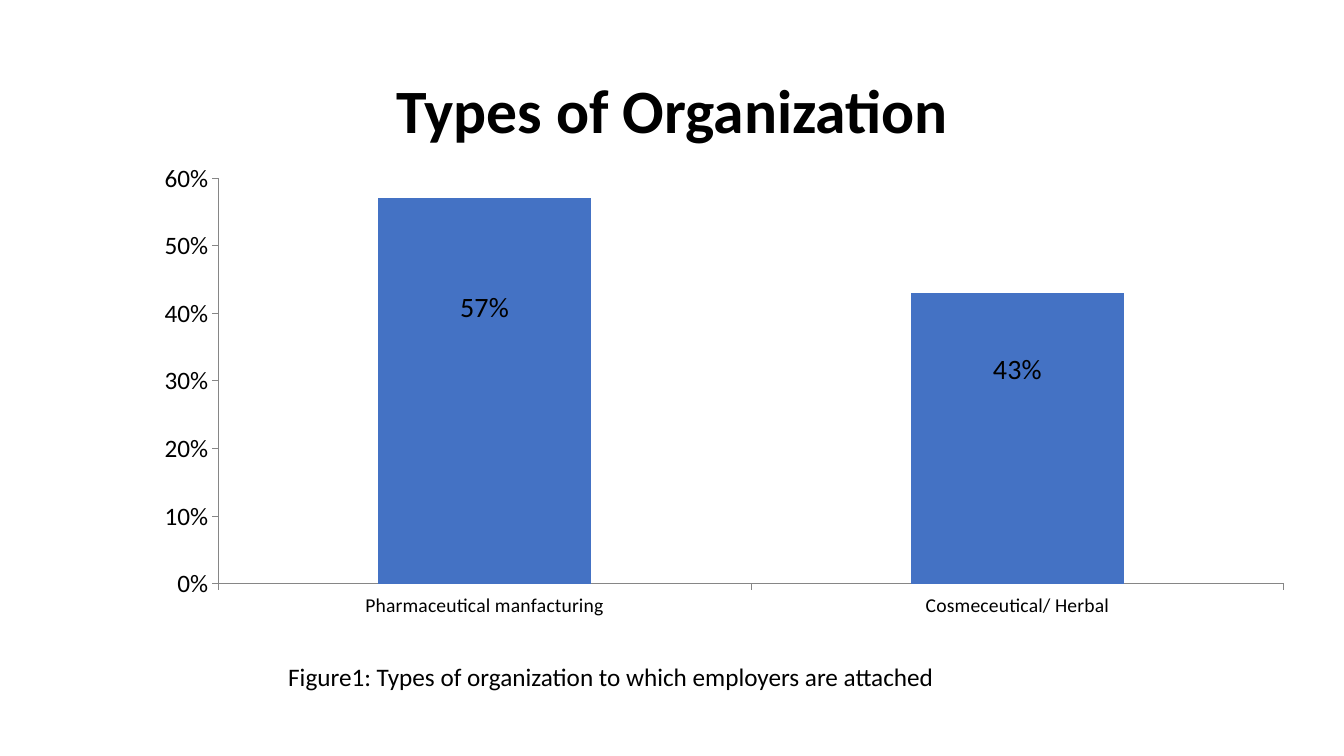
import dataclasses

import pptx
import pptx.chart.data
import pptx.dml.color
import pptx.enum.chart
import pptx.enum.text
import pptx.oxml
import pptx.oxml.ns
import pptx.util

Inches = pptx.util.Inches
Pt = pptx.util.Pt
qualified = pptx.oxml.ns.qn


@dataclasses.dataclass(frozen=True)
class Theme:
    font: str = "Calibri"
    text: str = "000000"
    bar: str = "4472C4"
    axis: str = "868686"
    title_size: int = 44
    label_size: int = 20
    body_size: int = 18
    category_size: int = 14
    chart_size: int = 10


THEME = Theme()

# Category, share, and the label's offset as fractions of the chart size
ORGANIZATIONS = [
    ("Pharmaceutical manfacturing", 0.57, (0, 0.28)),
    ("Cosmeceutical/ Herbal", 0.43, (0, 0.21)),
]


def color(value):
    return pptx.dml.color.RGBColor.from_string(value)


def set_values(target, values):
    for name, value in values.items():
        setattr(target, name, value)


def format_font(font, size, bold=False):
    set_values(font, {"name": THEME.font, "size": Pt(size), "bold": bold})
    font.color.rgb = color(THEME.text)


def set_layout(parent, index, values):
    """Give a chart element a manual layout, placed at the child index."""
    for old_layout in parent.findall(qualified("c:layout")):
        parent.remove(old_layout)
    settings = "".join(f'<c:{name} val="{value}"/>' for name, value in values.items())
    parent.insert(index, pptx.oxml.parse_xml(
        f'<c:layout {pptx.oxml.ns.nsdecls("c")}>'
        f"<c:manualLayout>{settings}</c:manualLayout></c:layout>"
    ))


def hide_leader_lines(labels):
    for setting in labels.findall(qualified("c:showLeaderLines")):
        setting.set("val", "0")
    labels.append(pptx.oxml.parse_xml(
        f'<c:extLst {pptx.oxml.ns.nsdecls("c")}>'
        '<c:ext uri="{CE6537A1-D6FC-4f65-9D91-7224C49458BB}" '
        'xmlns:c15="http://schemas.microsoft.com/office/drawing/2012/chart">'
        '<c15:showLeaderLines val="0"/></c:ext></c:extLst>'
    ))


def add_title(slide, text):
    title = slide.shapes.title
    set_values(title, {
        "left": Inches(0.92), "top": Inches(0.4),
        "width": Inches(11.5), "height": Inches(1.45),
    })
    frame = title.text_frame
    set_values(frame, {
        "text": text, "word_wrap": True,
        "vertical_anchor": pptx.enum.text.MSO_ANCHOR.MIDDLE,
    })
    paragraph = frame.paragraphs[0]
    set_values(paragraph, {
        "alignment": pptx.enum.text.PP_ALIGN.CENTER, "line_spacing": 0.9,
    })
    format_font(paragraph.runs[0].font, THEME.title_size, bold=True)


def format_axis(axis, size):
    set_values(axis, {
        "has_major_gridlines": False,
        "major_tick_mark": pptx.enum.chart.XL_TICK_MARK.OUTSIDE,
        "minor_tick_mark": pptx.enum.chart.XL_TICK_MARK.NONE,
    })
    axis.format.line.color.rgb = color(THEME.axis)
    axis.format.line.width = Pt(0.75)
    format_font(axis.tick_labels.font, size)


def format_labels(series):
    set_values(series.data_labels, {
        "show_value": True, "number_format": "0%", "number_format_is_linked": False,
    })
    format_font(series.data_labels.font, THEME.label_size)
    for index in range(len(ORGANIZATIONS)):
        label = series.points[index].data_label
        format_font(label.font, THEME.label_size)
        label.position = pptx.enum.chart.XL_LABEL_POSITION.OUTSIDE_END
    labels = series._element.find(qualified("c:dLbls"))
    for element, (_, _, (x, y)) in zip(labels.findall(qualified("c:dLbl")), ORGANIZATIONS):
        set_layout(element, 1, {"x": x, "y": y})
    hide_leader_lines(labels)


def add_organization_chart(slide):
    data = pptx.chart.data.CategoryChartData(number_format="0%")
    data.categories = [name for name, _, _ in ORGANIZATIONS]
    data.add_series("Series 1", [share for _, share, _ in ORGANIZATIONS])
    chart = slide.shapes.add_chart(
        pptx.enum.chart.XL_CHART_TYPE.COLUMN_CLUSTERED,
        Inches(1.36), Inches(1.49), Inches(11.49), Inches(4.64), data,
    ).chart
    set_values(chart, {"has_title": False, "has_legend": False})
    format_font(chart.font, THEME.chart_size)

    format_axis(chart.category_axis, THEME.category_size)
    format_axis(chart.value_axis, THEME.body_size)
    set_values(chart.value_axis, {
        "minimum_scale": 0, "maximum_scale": 0.6, "major_unit": 0.1,
    })
    set_values(chart.value_axis.tick_labels, {
        "number_format": "0%", "number_format_is_linked": False,
    })

    plot = chart.plots[0]
    set_values(plot, {"gap_width": 150, "vary_by_categories": False})
    series = plot.series[0]
    series.format.fill.solid()
    series.format.fill.fore_color.rgb = color(THEME.bar)
    format_labels(series)
    set_layout(plot._element.getparent(), 0, {
        "layoutTarget": "inner", "xMode": "edge", "yMode": "edge",
        "x": 0.07, "y": 0.06, "w": 0.92, "h": 0.87,
    })


def add_caption(slide, text):
    box = slide.shapes.add_textbox(Inches(2.76), Inches(6.51), Inches(6.69), Inches(0.4))
    set_values(box.text_frame, {
        "text": text, "word_wrap": False,
        "auto_size": pptx.enum.text.MSO_AUTO_SIZE.SHAPE_TO_FIT_TEXT,
    })
    format_font(box.text_frame.paragraphs[0].runs[0].font, THEME.body_size)


def main():
    presentation = pptx.Presentation()
    set_values(presentation, {"slide_width": Inches(13.33), "slide_height": Inches(7.5)})
    slide = presentation.slides.add_slide(presentation.slide_layouts.get_by_name("Title Only"))
    add_title(slide, "Types of Organization")
    add_organization_chart(slide)
    add_caption(slide, "Figure1: Types of organization to which employers are attached")
    presentation.save("out.pptx")


if __name__ == "__main__":
    main()
